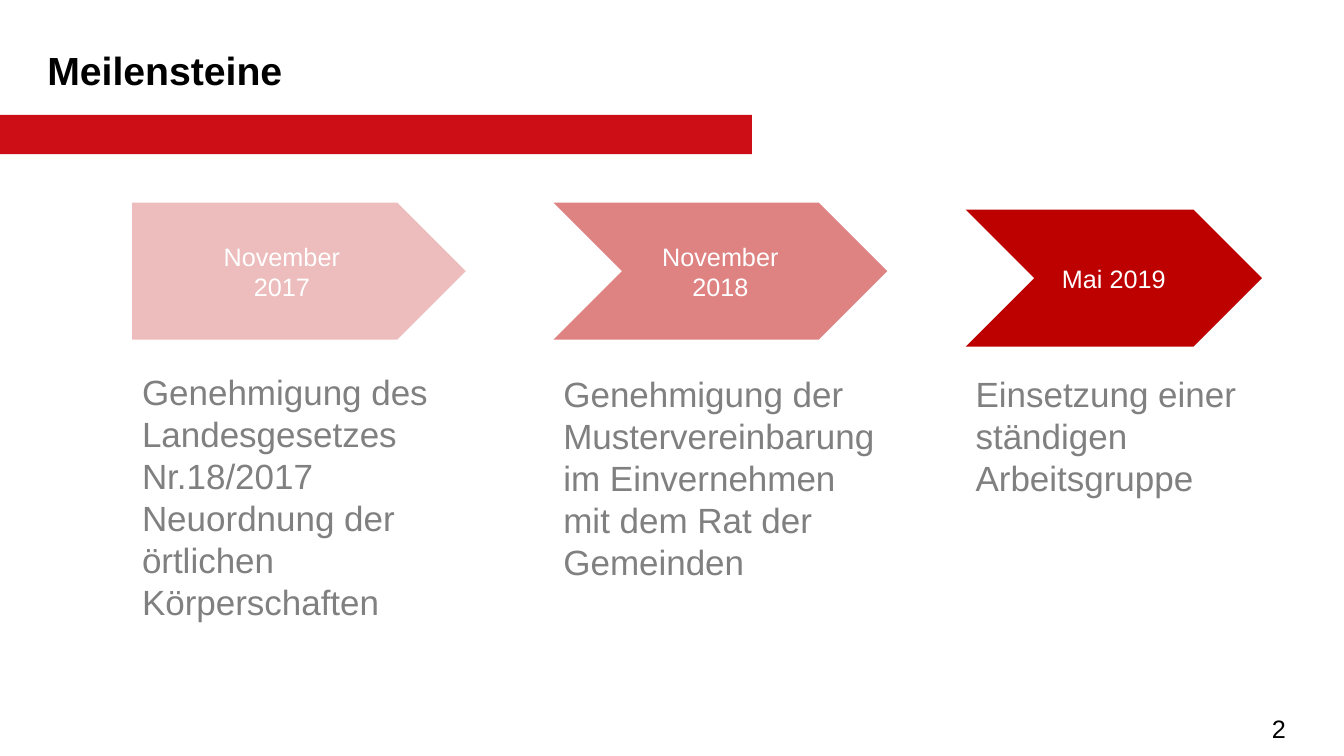
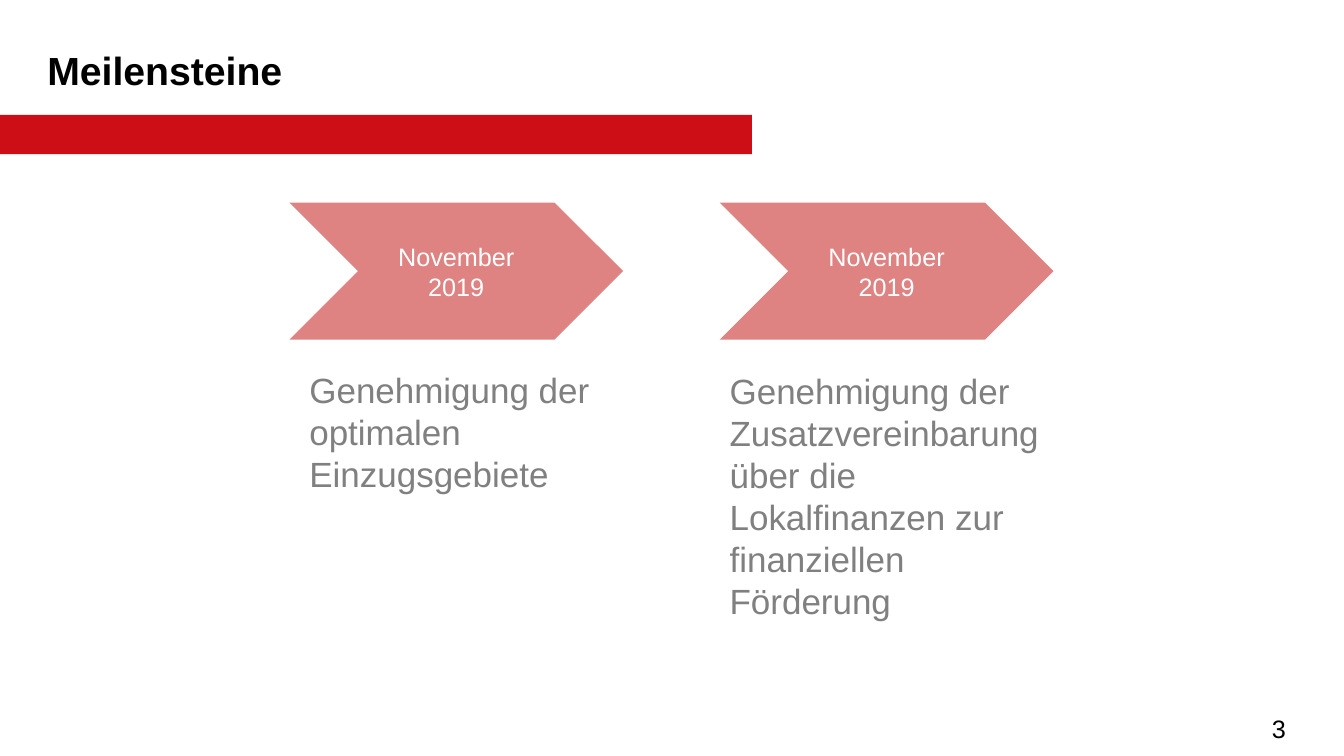
from dataclasses import dataclass

from lxml import etree
from pptx import Presentation
from pptx.dml.color import RGBColor
from pptx.enum.shapes import MSO_SHAPE
from pptx.enum.text import MSO_ANCHOR, PP_ALIGN
from pptx.oxml.ns import qn
from pptx.util import Inches, Pt

BAND_RED = RGBColor(0xCD, 0x0E, 0x16)
ARROW_RED = RGBColor(0xBD, 0x00, 0x00)
GREY = RGBColor(0x80, 0x80, 0x80)
BLACK = RGBColor(0x00, 0x00, 0x00)
WHITE = RGBColor(0xFF, 0xFF, 0xFF)
FONT = "Arial"
SLIDE_W, SLIDE_H = Inches(13.33), Inches(7.5)


@dataclass(frozen=True)
class Box:
    """A frame in percent of the slide's width and height."""
    left: float
    top: float
    width: float
    height: float

    def emu(self) -> tuple[int, int, int, int]:
        return (int(SLIDE_W * self.left / 100), int(SLIDE_H * self.top / 100),
                int(SLIDE_W * self.width / 100), int(SLIDE_H * self.height / 100))


@dataclass(frozen=True)
class Milestone:
    date: str
    text: str
    left: float
    text_top: float
    opacity: int = 49
    kind: MSO_SHAPE = MSO_SHAPE.CHEVRON
    width: float = 24.83
    top: float = 26.8
    indent: float = 0


BAND = Box(0, 15.2, 55.95, 5.2)
TITLE = Box(2.78, 5.47, 52.58, 7.6)
NUMBER = Box(93.9, 93.73, 6, 5.33)
ARROW_H = 18.13
TEXT_W, TEXT_H = 24.83, 35

SLIDES = {
    2: [
        Milestone("November\n2017",
                  "Genehmigung des Landesgesetzes Nr.18/2017 Neuordnung der "
                  "örtlichen Körperschaften",
                  9.83, 48.4, opacity=26, kind=MSO_SHAPE.PENTAGON),
        Milestone("November 2018",
                  "Genehmigung der Mustervereinbarung\n"
                  "im Einvernehmen mit dem Rat der Gemeinden",
                  41.18, 48.67),
        Milestone("Mai 2019", "Einsetzung einer ständigen Arbeitsgruppe",
                  71.85, 48.67, opacity=100, width=22.05, top=27.73),
    ],
    3: [
        Milestone("November 2019", "Genehmigung der optimalen Einzugsgebiete",
                  21.53, 48.13, indent=0.75),
        Milestone("November 2019",
                  "Genehmigung der Zusatzvereinbarung über die Lokalfinanzen "
                  "zur finanziellen Förderung",
                  53.55, 48.27),
    ],
}


def write(sp, text: str, *, size: float, color: RGBColor, bold: bool = False,
          align: PP_ALIGN = PP_ALIGN.LEFT,
          anchor: MSO_ANCHOR = MSO_ANCHOR.TOP) -> None:
    """Fill a shape with text, one paragraph per line."""
    tf = sp.text_frame
    tf.word_wrap = True
    tf.vertical_anchor = anchor
    for i, line in enumerate(text.split("\n")):
        p = tf.add_paragraph() if i else tf.paragraphs[0]
        p.alignment = align
        r = p.add_run()
        r.text = line
        r.font.name, r.font.size, r.font.bold = FONT, Pt(size), bold
        r.font.color.rgb = color


def add_text(s, box: Box, text: str, **fmt) -> None:
    write(s.shapes.add_textbox(*box.emu()), text, **fmt)


def add_block(s, kind: MSO_SHAPE, box: Box, color: RGBColor, opacity: int = 100):
    """Add a borderless filled shape; opacity is in percent."""
    sp = s.shapes.add_shape(kind, *box.emu())
    sp.shadow.inherit = False
    sp.line.fill.background()
    sp.fill.solid()
    sp.fill.fore_color.rgb = color
    if opacity < 100:
        clr = sp.fill._xPr.find(f"{qn('a:solidFill')}/{qn('a:srgbClr')}")
        etree.SubElement(clr, qn("a:alpha")).set("val", str(opacity * 1000))
    return sp


def add_frame(s, number: int) -> None:
    """Draw the band, title and number that every slide has."""
    add_block(s, MSO_SHAPE.RECTANGLE, BAND, BAND_RED)
    add_text(s, TITLE, "Meilensteine", size=28, color=BLACK, bold=True)
    add_text(s, NUMBER, str(number), size=18, color=BLACK)


def add_milestone(s, m: Milestone) -> None:
    add_text(s, Box(m.left + m.indent, m.text_top, TEXT_W, TEXT_H), m.text,
             size=25, color=GREY)
    arrow = add_block(s, m.kind, Box(m.left, m.top, m.width, ARROW_H),
                      ARROW_RED, m.opacity)
    write(arrow, m.date, size=18, color=WHITE,
          align=PP_ALIGN.CENTER, anchor=MSO_ANCHOR.MIDDLE)


def main() -> None:
    prs = Presentation()
    prs.slide_width, prs.slide_height = SLIDE_W, SLIDE_H
    blank = prs.slide_layouts[6]
    for number, milestones in SLIDES.items():
        s = prs.slides.add_slide(blank)
        add_frame(s, number)
        for m in milestones:
            add_milestone(s, m)
    prs.save("out.pptx")


if __name__ == "__main__":
    main()
